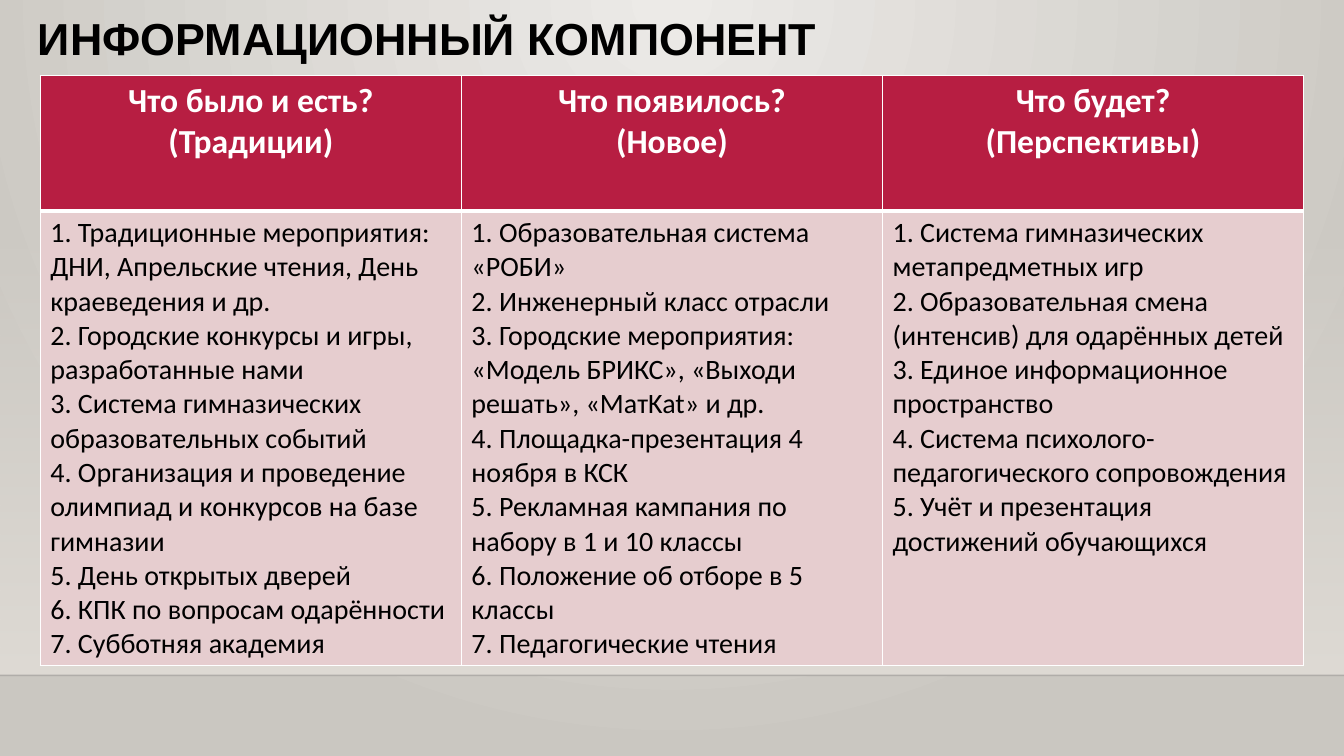
from lxml.etree import SubElement
from pptx import Presentation
from pptx.dml.color import RGBColor
from pptx.enum.shapes import MSO_CONNECTOR, MSO_SHAPE
from pptx.enum.text import PP_ALIGN
from pptx.oxml import parse_xml
from pptx.oxml.ns import nsdecls, qn
from pptx.util import Pt


def rgb(color):
    return RGBColor.from_string(color)


def write(p, text, size, color="000000", font="Calibri", bold=False, align=PP_ALIGN.LEFT):
    p.alignment = align
    r = p.add_run()
    r.text = text
    r.font.size, r.font.name, r.font.bold = Pt(size), font, bold
    r.font.color.rgb = rgb(color)


prs = Presentation()
prs.slide_width, prs.slide_height = Pt(960), Pt(540)
s = prs.slides.add_slide(prs.slide_layouts[6])

# Background: radial gradient spreading from the top centre
fill = s.background.fill
fill.gradient()
for stop, color in zip(fill.gradient_stops, ("ECEAE7", "CAC7C1")):
    stop.color.rgb = rgb(color)
grad = s.element.find(".//" + qn("a:gradFill"))
grad.replace(grad.find(qn("a:lin")), parse_xml(
    f'<a:path {nsdecls("a")} path="circle">'
    '<a:fillToRect l="43000" t="0" r="43000" b="100000"/></a:path>'))

# Wall: fades in towards the floor
wall = s.shapes.add_shape(MSO_SHAPE.RECTANGLE, 0, Pt(159), Pt(960), Pt(323.4))
wall.shadow.inherit = False
wall.line.fill.background()
wall.fill.gradient()
wall.fill.gradient_angle = 270
for stop in wall.fill.gradient_stops:
    stop.color.rgb = rgb("DFDBD5")
first_color = wall.element.find(".//" + qn("a:gs")).find(qn("a:srgbClr"))
SubElement(first_color, qn("a:alpha"), val="0")

# Floor line
floor = s.shapes.add_connector(MSO_CONNECTOR.STRAIGHT, 0, Pt(482.4), Pt(960), Pt(482.4))
floor.line.width = Pt(1)
floor.line.color.rgb = rgb("000001")
SubElement(floor.element.find(".//" + qn("a:srgbClr")), qn("a:alpha"), val="20000")
SubElement(floor.element.spPr, qn("a:effectLst"))

# Title
tf = s.shapes.add_textbox(Pt(20), Pt(8.5), Pt(756), Pt(42)).text_frame
tf.word_wrap = True
tf.paragraphs[0].line_spacing = 0.9
write(tf.paragraphs[0], "ИНФОРМАЦИОННЫЙ КОМПОНЕНТ", 32, font="Arial", bold=True)

# Table: one entry per column, heading lines and then items
columns = [
    (["Что было и есть?", "(Традиции)"], [
        "Традиционные мероприятия: ДНИ, Апрельские чтения, День краеведения и др.",
        "Городские конкурсы и игры, разработанные нами",
        "Система гимназических образовательных событий",
        "Организация и проведение олимпиад и конкурсов на базе гимназии",
        "День открытых дверей",
        "КПК по вопросам одарённости",
        "Субботняя академия"]),
    (["Что появилось?", "(Новое)"], [
        "Образовательная система «РОБИ»",
        "Инженерный класс отрасли",
        "Городские мероприятия: «Модель БРИКС», «Выходи решать», «МатKat» и др.",
        "Площадка-презентация 4 ноября в КСК",
        "Рекламная кампания по набору в 1 и 10 классы",
        "Положение об отборе в 5 классы",
        "Педагогические чтения"]),
    (["Что будет?", "(Перспективы)"], [
        "Система гимназических метапредметных игр",
        "Образовательная смена (интенсив) для одарённых детей",
        "Единое информационное пространство",
        "Система психолого-педагогического сопровождения",
        "Учёт и презентация достижений обучающихся"]),
]
header = dict(size=24, color="FFFFFF", bold=True, align=PP_ALIGN.CENTER)
table = s.shapes.add_table(2, 3, Pt(28.8), Pt(54), Pt(902.4), Pt(421.5)).table
table.rows[0].height, table.rows[1].height = Pt(96.5), Pt(325)

for col, (heading, items) in enumerate(columns):
    table.columns[col].width = Pt(300.8)
    numbered = [f"{n}. {item}" for n, item in enumerate(items, 1)]
    rows = [(heading, "B71E42", header, {"lnB": 3}),
            (numbered, "E6CDCF", dict(size=20), {"lnT": 3})]
    for row, (lines, color, style, thick) in enumerate(rows):
        cell = table.cell(row, col)
        tf = cell.text_frame
        for i, line in enumerate(lines):
            write(tf.add_paragraph() if i else tf.paragraphs[0], line, **style)
        # White borders, thicker under the header
        tcPr = cell._tc.get_or_add_tcPr()
        for side in ("lnL", "lnR", "lnT", "lnB"):
            ln = SubElement(tcPr, qn(f"a:{side}"), w=str(Pt(thick.get(side, 1))))
            SubElement(SubElement(ln, qn("a:solidFill")), qn("a:srgbClr"), val="FFFFFF")
        cell.fill.solid()
        cell.fill.fore_color.rgb = rgb(color)

prs.save("out.pptx")
